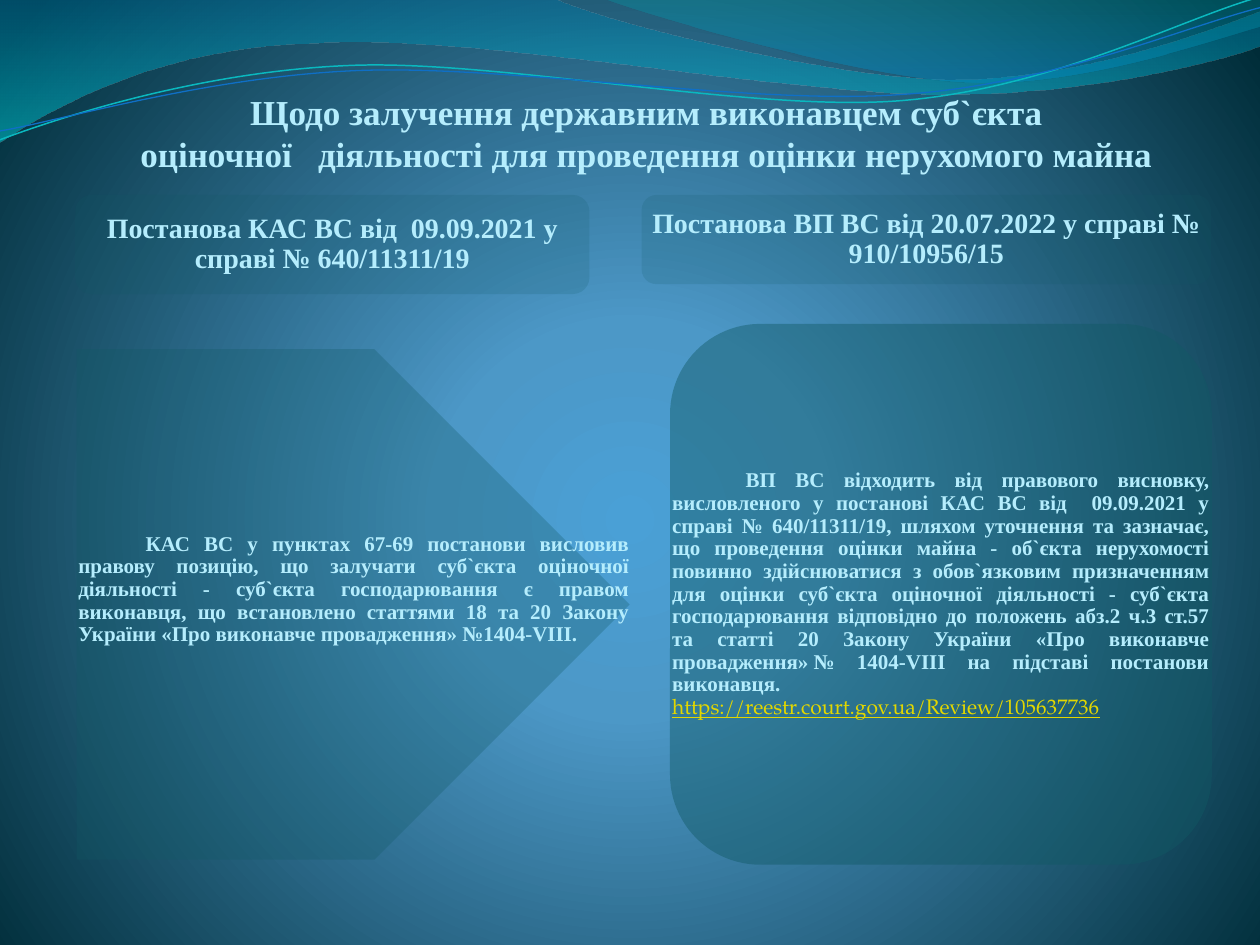
from pptx import Presentation
from pptx.dml.color import RGBColor
from pptx.enum.shapes import MSO_SHAPE
from pptx.enum.text import MSO_ANCHOR, PP_ALIGN
from pptx.oxml import parse_xml
from pptx.oxml.ns import nsdecls, qn
from pptx.util import Pt

PENTAGON = MSO_SHAPE.PENTAGON
ALTERNATE = MSO_SHAPE.FLOWCHART_ALTERNATE_PROCESS
ROUNDED = MSO_SHAPE.ROUNDED_RECTANGLE
MIDDLE, BOTTOM = MSO_ANCHOR.MIDDLE, MSO_ANCHOR.BOTTOM
CENTER, JUSTIFY = PP_ALIGN.CENTER, PP_ALIGN.JUSTIFY

THEME = {
    "font": "Times New Roman", "link_font": "TeX Gyre Pagella",
    "text": "B5EDFD", "link": "E2D700", "panel": "115964",
    "title": 20, "head": 16, "body": 12,
}

# Content: (text, is_link) runs
TITLE = [("Щодо залучення державним виконавцем суб`єкта "
          "оціночної\u00a0\u00a0\u00a0діяльності для проведення оцінки нерухомого майна", False)]
HEAD_LEFT = [("Постанова КАС ВС від  09.09.2021 у справі № 640/11311/19", False)]
HEAD_RIGHT = [("Постанова ВП ВС від 20.07.2022 у справі № 910/10956/15", False)]
BODY_LEFT = [(
    "\tКАС ВС у пунктах 67-69 постанови висловив правову позицію, що залучати "
    "суб`єкта оціночної діяльності - суб`єкта господарювання є правом виконавця, "
    "що встановлено статтями 18 та 20 Закону України «Про виконавче "
    "провадження»\u00a0№1404-VIII. ", False)]
BODY_RIGHT = [(
    "\tВП ВС відходить від правового висновку, висловленого у постанові КАС ВС "
    "від  09.09.2021 у справі № 640/11311/19, шляхом уточнення та зазначає, що "
    "проведення оцінки майна - об`єкта нерухомості повинно здійснюватися з "
    "обов`язковим призначенням для оцінки суб`єкта оціночної діяльності - "
    "суб`єкта господарювання відповідно до положень абз.2 ч.3 ст.57 та статті 20 "
    "Закону України «Про виконавче провадження»\u00a0№ 1404-VIII на підставі "
    "постанови виконавця. ", False),
    ("https://reestr.court.gov.ua/Review/105637736", True)]

HEAD = dict(size=THEME["head"], align=CENTER, spacing=0.9, insets=(5, 5, 5, 5))
BODY = dict(size=THEME["body"], align=JUSTIFY, spacing=0.9)
# Panels: shape, box (left, top, width, height), opacity %, runs, text format
PANELS = [
    (PENTAGON, (43.8, 199.5, 316, 291.8), 29, BODY_LEFT,
     dict(BODY, tab=38.5, insets=(1, 1, 0, 18))),
    (ALTERNATE, (382.9, 185.1, 309.6, 309), 44, BODY_RIGHT,
     dict(BODY, tab=42, insets=(1.2, 1.2, 1.2, 1.2))),
    (ROUNDED, (43, 111.4, 293.8, 56.6), 17, HEAD_LEFT, HEAD),
    (ROUNDED, (366.7, 111.4, 325.3, 51), 16, HEAD_RIGHT, HEAD),
]

# Gradient stops: position %, colour, opacity %
BACKGROUND = [(0, "4AA0D6", 100), (25, "4C98C7", 100), (100, "002C38", 100)]
RADIAL = ('<a:path path="circle"><a:fillToRect l="10000" t="110000" '
          'r="10000" b="100000"/></a:path>')
DOWNWARD = '<a:lin ang="5400000" scaled="0"/>'

# Outlines: a pair is a straight step, six numbers are a Bezier curve
WAVES = [
    ([(0, 0), (316.8, -0.7), (342.7, 12.2, 478.1, 45.4, 545.8, 45.4),
      (614.2, 45.4, 689.8, 18.7, 720, 6.5), (720.7, 25.9),
      (707.8, 31.7, 626.4, 54.7, 537.1, 54), (447.8, 54, 275, 20.2, 185, 24.5),
      (92.9, 25.9, 33.1, 59.8, -0.7, 81.4)],
     [(0, "0074A1", 45), (100, "00C6CF", 55)]),
    ([(344.9, -0.7), (366.5, 7.9, 491, 44.6, 553.7, 46.8),
      (616.3, 49.7, 691.9, 23, 720, 15.1), (720, 0)],
     [(0, "00A1A9", 30), (80, "008BBF", 45)]),
]
STROKE_ROTATION = 357.3
STROKES = [
    ([(-1.4, 62.9), (33.7, 51.7, 114, 29.4, 199.8, 29.9),
      (284.8, 30.3, 425.8, 67.2, 512.4, 64.9),
      (599, 62.4, 676.4, 25.7, 720.2, 15.6)], "0AB8BF", 0.85),
    ([(-1.2, 57.9), (33, 53.8, 118.3, 32.5, 204, 33),
      (290.5, 33.5, 428.9, 63.8, 515.5, 61.3),
      (601.3, 59.6, 678.5, 30.1, 721.4, 21.4)], "0F6FC6", 0.75),
]
UNITS = 100  # outline units per point


def color(name):
    return RGBColor.from_string(name)


def set_gradient(owner, fill, stops, direction):
    fill.gradient()
    grad = owner._element.find(".//" + qn("a:gradFill"))
    for child in list(grad):
        grad.remove(child)
    items = "".join(
        f'<a:gs pos="{pos * 1000}"><a:srgbClr val="{rgb}">'
        f'<a:alpha val="{alpha * 1000}"/></a:srgbClr></a:gs>'
        for pos, rgb, alpha in stops)
    new = parse_xml(f'<a:gradFill {nsdecls("a")}><a:gsLst>{items}</a:gsLst>'
                    f'{direction}</a:gradFill>')
    for child in list(new):
        grad.append(child)


def add_outline(s, outline, close):
    start, *steps = [[v * UNITS for v in step] for step in outline]
    builder = s.shapes.build_freeform(*start, scale=Pt(1) / UNITS)
    points = [step[i:i + 2] for step in steps for i in range(0, len(step), 2)]
    builder.add_line_segments(points, close=close)
    sp = builder.convert_to_shape()
    sp.shadow.inherit = False
    # Join each three control points into one curve
    lines = iter(sp._element.findall(".//" + qn("a:lnTo")))
    for step in steps:
        group = [next(lines) for _ in range(len(step) // 2)]
        if len(group) == 3:
            curve = parse_xml(f'<a:cubicBezTo {nsdecls("a")}/>')
            group[0].addprevious(curve)
            for line in group:
                curve.append(line[0])
                line.getparent().remove(line)
    return sp


def add_panel(s, kind, box, opacity):
    sp = s.shapes.add_shape(kind, *map(Pt, box))
    sp.shadow.inherit = False
    sp.line.fill.background()
    sp.fill.solid()
    sp.fill.fore_color.rgb = color(THEME["panel"])
    rgb = sp._element.spPr.find(".//" + qn("a:srgbClr"))
    rgb.append(parse_xml(f'<a:alpha {nsdecls("a")} val="{opacity * 1000}"/>'))


def add_text(s, runs, box, size, align, insets, anchor=MIDDLE, spacing=1.0, tab=None):
    tf = s.shapes.add_textbox(*map(Pt, box)).text_frame
    tf.word_wrap = True
    tf.vertical_anchor = anchor
    tf.margin_left, tf.margin_top, tf.margin_right, tf.margin_bottom = map(Pt, insets)
    p = tf.paragraphs[0]
    p.alignment = align
    p.line_spacing = spacing
    if tab:
        p._p.get_or_add_pPr().set("defTabSz", str(Pt(tab)))
    for text, is_link in runs:
        r = p.add_run()
        r.text = text
        r.font.size = Pt(size)
        r.font.name = THEME["link_font" if is_link else "font"]
        r.font.color.rgb = color(THEME["link" if is_link else "text"])
        r.font.bold = not is_link
        r.font.underline = is_link


def main():
    prs = Presentation()
    prs.slide_width, prs.slide_height = Pt(720), Pt(540)
    s = prs.slides.add_slide(prs.slide_layouts[6])
    set_gradient(s, s.background.fill, BACKGROUND, RADIAL)

    # Waves along the top edge
    for outline, stops in WAVES:
        sp = add_outline(s, outline, close=True)
        set_gradient(sp, sp.fill, stops, DOWNWARD)
        sp.line.fill.background()
    for outline, rgb, width in STROKES:
        sp = add_outline(s, outline, close=False)
        sp.rotation = STROKE_ROTATION
        sp.fill.background()
        sp.line.color.rgb = color(rgb)
        sp.line.width = Pt(width)

    # Title, then the panels with their text
    add_text(s, TITLE, (48.3, 20.9, 643.7, 78.7), size=THEME["title"], align=CENTER,
             insets=(0, 0, 1.4, 0), anchor=BOTTOM)
    for kind, box, opacity, runs, text_format in PANELS:
        add_panel(s, kind, box, opacity)
        add_text(s, runs, box, **text_format)

    prs.save("out.pptx")


if __name__ == "__main__":
    main()
